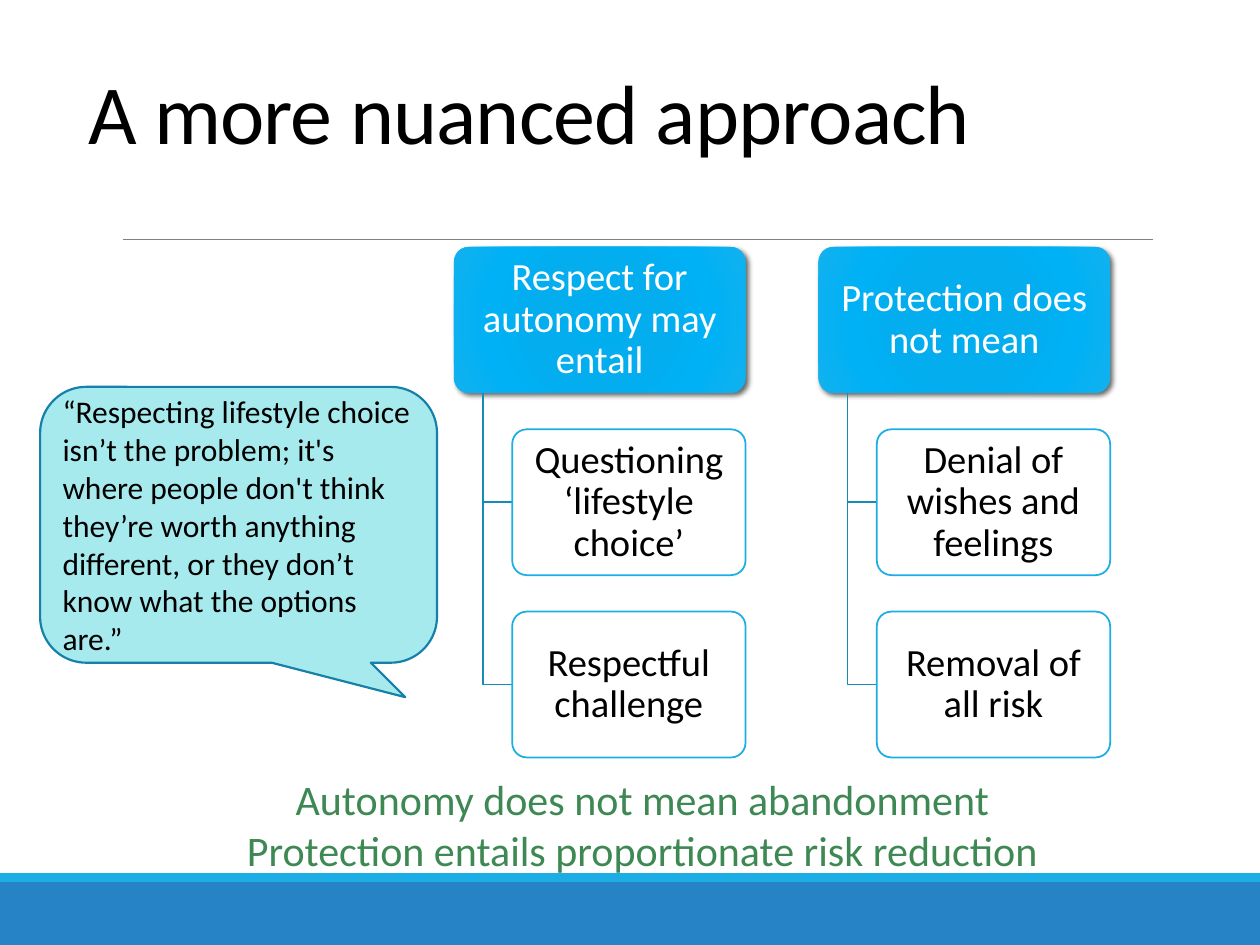
from dataclasses import dataclass

from pptx import Presentation
from pptx.dml.color import RGBColor
from pptx.enum.shapes import MSO_CONNECTOR, MSO_SHAPE
from pptx.enum.text import MSO_ANCHOR, PP_ALIGN
from pptx.oxml import parse_xml
from pptx.oxml.ns import nsdecls, qn
from pptx.util import Cm, Pt

RECTANGLE = MSO_SHAPE.RECTANGLE
ROUNDED = MSO_SHAPE.ROUNDED_RECTANGLE
CALLOUT = MSO_SHAPE.ROUNDED_RECTANGULAR_CALLOUT
STRAIGHT = MSO_CONNECTOR.STRAIGHT
LEFT, CENTER = PP_ALIGN.LEFT, PP_ALIGN.CENTER
TOP, MIDDLE, BOTTOM = MSO_ANCHOR.TOP, MSO_ANCHOR.MIDDLE, MSO_ANCHOR.BOTTOM


@dataclass(frozen=True)
class Theme:
    font: str = "Calibri"
    title_size: int = 48
    message_size: int = 24
    node_size: int = 22
    quote_size: int = 18
    black: str = "000000"
    white: str = "FFFFFF"
    rule: str = "808080"
    band: str = "2683C6"
    accent: str = "1CADE4"
    branch: str = "168BB7"
    message: str = "3E8853"
    quote_fill: str = "A6EAEE"
    quote_line: str = "1580A9"
    heading_stops: tuple = ((0, "00ADEF"), (34, "03ADEE"), (70, "00B1F5"), (100, "12B1EE"))


THEME = Theme()
COLUMNS = [
    ("Respect for autonomy may entail", ["Questioning ‘lifestyle choice’", "Respectful challenge"]),
    ("Protection does not mean", ["Denial of wishes and feelings", "Removal of all risk"]),
]
QUOTE = (
    "“Respecting lifestyle choice isn’t the problem; it's where people don't think "
    "they’re worth anything different, or they don’t know what the options are.”"
)
MESSAGES = ["Autonomy does not mean abandonment", "Protection entails proportionate risk reduction"]


def color(value):
    return RGBColor.from_string(value)


def write(shape, lines, size, text_color, align=LEFT, anchor=MIDDLE, spacing=None, insets=(0.25, 0.13)):
    frame = shape.text_frame
    frame.word_wrap = True
    frame.vertical_anchor = anchor
    frame.margin_left = frame.margin_right = Cm(insets[0])
    frame.margin_top = frame.margin_bottom = Cm(insets[1])
    frame.text = "\n".join(lines)
    for paragraph in frame.paragraphs:
        paragraph.alignment = align
        paragraph.line_spacing = spacing
        paragraph.font.name = THEME.font
        paragraph.font.size = Pt(size)
        paragraph.font.color.rgb = color(text_color)


def add_box(slide, kind, box, fill=None, line=None, line_width=1):
    shape = slide.shapes.add_shape(kind, *map(Cm, box))
    shape.shadow.inherit = False
    if fill:
        shape.fill.solid()
        shape.fill.fore_color.rgb = color(fill)
    else:
        shape.fill.background()
    if line:
        shape.line.color.rgb = color(line)
        shape.line.width = Pt(line_width)
    else:
        shape.line.fill.background()
    return shape


def add_frame(slide, width, height):
    add_box(slide, RECTANGLE, (0, height - 1.27, width, 1.27), THEME.band)
    add_box(slide, RECTANGLE, (0, height - 1.45, width, 0.18), THEME.accent)
    rule = slide.shapes.add_connector(STRAIGHT, Cm(2.48), Cm(4.83), Cm(23.24), Cm(4.83))
    rule.line.color.rgb = color(THEME.rule)
    rule.line.width = Pt(0.5)
    rule._element.spPr.append(parse_xml(f"<a:effectLst {nsdecls('a')}/>"))


def add_title(slide, box, text):
    shape = slide.shapes.add_textbox(*map(Cm, box))
    write(shape, [text], THEME.title_size, THEME.black, anchor=BOTTOM, spacing=0.85)
    run = shape.text_frame.paragraphs[0].runs[0]
    run.font._element.set("spc", "-50")


def add_glow_and_shadow(shape):
    stops = "".join(
        f'<a:gs pos="{position * 1000}"><a:srgbClr val="{value}"/></a:gs>'
        for position, value in THEME.heading_stops
    )
    gradient = parse_xml(
        f'<a:gradFill {nsdecls("a")} rotWithShape="1"><a:gsLst>{stops}</a:gsLst><a:path path="circle">'
        '<a:fillToRect l="100000" t="100000" r="100000" b="100000"/></a:path></a:gradFill>'
    )
    properties = shape._element.spPr
    properties.replace(properties.find(qn("a:noFill")), gradient)
    properties.find(qn("a:effectLst")).append(parse_xml(
        f'<a:outerShdw {nsdecls("a")} blurRad="{Pt(3)}" dist="{Pt(2)}" dir="2700000" rotWithShape="0">'
        '<a:srgbClr val="000000"><a:alpha val="60000"/></a:srgbClr></a:outerShdw>'
    ))


def add_node(slide, box, text, heading=False):
    if heading:
        shape = add_box(slide, ROUNDED, box)
        add_glow_and_shadow(shape)
    else:
        shape = add_box(slide, ROUNDED, box, THEME.white, THEME.accent)
        white = shape._element.spPr.find(qn("a:solidFill"))[0]
        white.append(parse_xml(f'<a:alpha {nsdecls("a")} val="90000"/>'))
    shape.adjustments[0] = 0.1
    text_color = THEME.white if heading else THEME.black
    write(shape, [text], THEME.node_size, text_color, CENTER, spacing=0.9, insets=(0.13, 0.08))


def add_branch(slide, left, top, right, bottom):
    builder = slide.shapes.build_freeform(Cm(left), Cm(top))
    builder.add_line_segments([(Cm(left), Cm(bottom)), (Cm(right), Cm(bottom))], close=False)
    branch = builder.convert_to_shape()
    branch.shadow.inherit = False
    branch.fill.background()
    branch.line.color.rgb = color(THEME.branch)
    branch.line.width = Pt(1)


def add_column(slide, left, top, unit, heading, children):
    add_node(slide, (left, top, 2 * unit, unit), heading, heading=True)
    child_left = left + 0.4 * unit
    for index, child in enumerate(children, start=1):
        child_top = top + 1.25 * unit * index
        add_branch(slide, left + 0.2 * unit, top + unit, child_left, child_top + unit / 2)
        add_node(slide, (child_left, child_top, 1.6 * unit, unit), child)


def add_hierarchy(slide, left, top, unit, columns):
    for index, (heading, children) in enumerate(columns):
        add_column(slide, left + 2.5 * unit * index, top, unit, heading, children)


def add_messages(slide, box, lines):
    shape = slide.shapes.add_textbox(*map(Cm, box))
    write(shape, lines, THEME.message_size, THEME.message, CENTER, TOP)


def add_quote(slide, box, text):
    shape = add_box(slide, CALLOUT, box, THEME.quote_fill, THEME.quote_line, 1.25)
    for index, value in enumerate((0.42, 0.625, 0.167)):
        shape.adjustments[index] = value
    write(shape, [text], THEME.quote_size, THEME.black, insets=(0.18, 0.1))
    shape.text_frame.paragraphs[0].space_before = Pt(3.6)


def main():
    width, height = 25.4, 19.05
    presentation = Presentation()
    presentation.slide_width, presentation.slide_height = Cm(width), Cm(height)
    slide = presentation.slides.add_slide(presentation.slide_layouts[6])
    add_frame(slide, width, height)
    add_title(slide, (1.53, 0.89, 22.86, 2.49), "A more nuanced approach")
    add_hierarchy(slide, 9.15, 4.98, 2.94, COLUMNS)
    add_messages(slide, (3.05, 15.47, 19.8, 2.31), MESSAGES)
    add_quote(slide, (0.81, 7.8, 8, 5.56), QUOTE)
    presentation.save("out.pptx")


if __name__ == "__main__":
    main()
